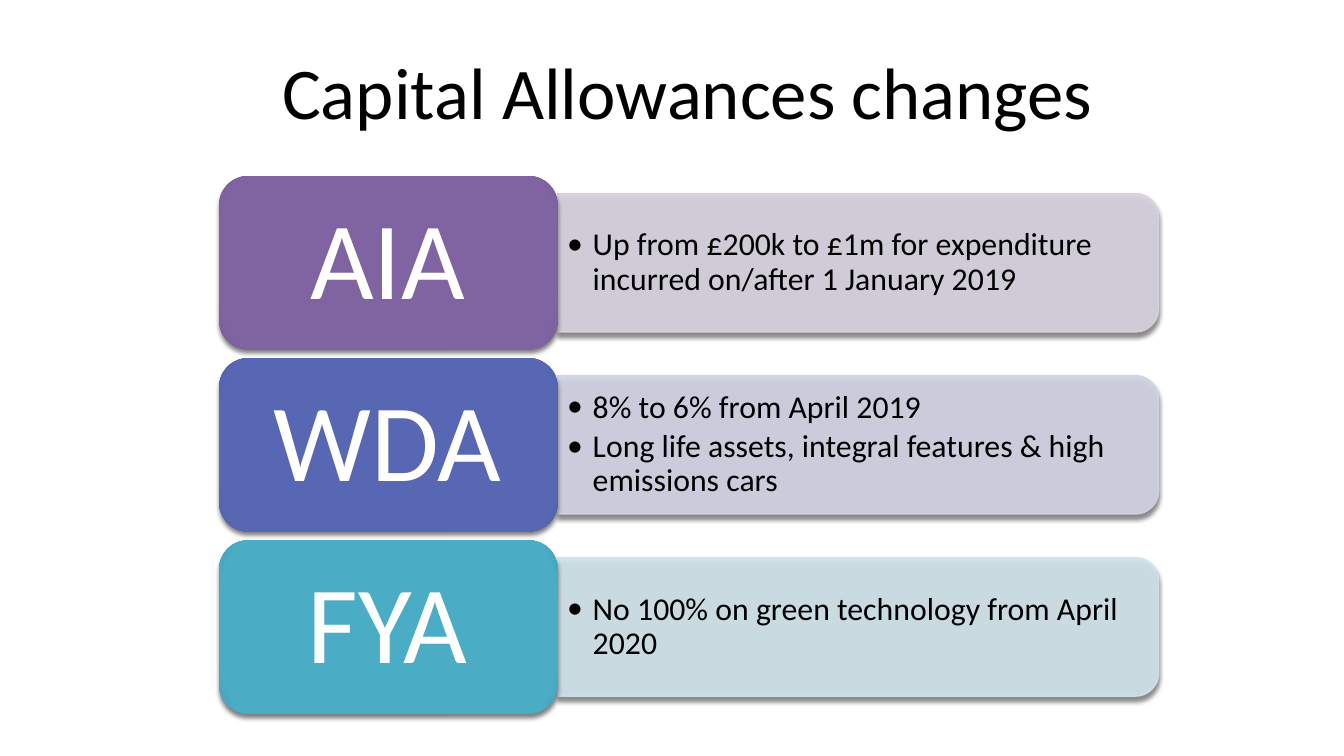
"""Build the capital allowances slide: three labels, each beside a panel of points."""
from pptx import Presentation
from pptx.dml.color import RGBColor as Rgb
from pptx.enum.shapes import MSO_SHAPE as Kind
from pptx.enum.text import MSO_ANCHOR as Anchor, MSO_AUTO_SIZE as Fit, PP_ALIGN as Align
from pptx.oxml import parse_xml
from pptx.oxml.ns import nsdecls
from pptx.util import Inches, Pt

THEME = {
    "font": "Calibri", "ink": "000000", "white": "FFFFFF",
    "title": 39, "label": 59, "point": 17,
    "rows": [("8064A2", "775D97", "D8D3E0"),
             ("5767B4", "5160A8", "D1D4E5"),
             ("4BACC6", "46A0B8", "D0E3EA")],
}
ROWS = [
    ("AIA", ["Up from £200k to £1m for expenditure incurred on/after 1 January 2019"]),
    ("WDA", ["8% to 6% from April 2019",
             "Long life assets, integral features & high emissions cars"]),
    ("FYA", ["No 100% on green technology from April 2020"]),
]
NS = nsdecls("a")
SHADE = (f'<a:outerShdw {NS} blurRad="31750" dist="25400" dir="5400000" rotWithShape="0">'
         '<a:srgbClr val="000000"><a:alpha val="50000"/></a:srgbClr></a:outerShdw>')
ALPHA = f'<a:alpha {NS} val="90000"/>'
BULLET = (f'<a:buFont {NS} typeface="{THEME["font"]}"/>', f'<a:buChar {NS} char="•"/>')


def write(frame, lines, size, ink, pads, **form):
    """Fill a text frame with styled paragraphs."""
    sides = ("margin_left", "margin_top", "margin_right", "margin_bottom")
    look = {"word_wrap": True, "auto_size": Fit.NONE,
            "vertical_anchor": form.pop("anchor", Anchor.MIDDLE)}
    look.update(zip(sides, [Inches(pad) for pad in pads * 2]))
    for name, value in look.items():
        setattr(frame, name, value)
    for i, line in enumerate(lines):
        para = frame.paragraphs[0] if i == 0 else frame.add_paragraph()
        for name, value in form.items():
            setattr(para, name, value)
        run = para.add_run()
        run.text = line
        for name, value in {"name": THEME["font"], "size": Pt(size)}.items():
            setattr(run.font, name, value)
        run.font.color.rgb = Rgb.from_string(ink)


def block(kind, left, top, width, height):
    """Add a preset shape with a soft drop shadow."""
    shape = slide.shapes.add_shape(kind, *map(Inches, (left, top, width, height)))
    shape.shadow.inherit = False
    shape.element.spPr.find("{*}effectLst").append(parse_xml(SHADE))
    return shape


deck = Presentation()
deck.slide_width, deck.slide_height = Inches(10), Inches(10) * 9 // 16
slide = deck.slides.add_slide(deck.slide_layouts[5])

title = slide.shapes.title
spot = {"left": 0.48, "top": 0.3, "width": 9.27, "height": 0.66}
for name, value in spot.items():
    setattr(title, name, Inches(value))
write(title.text_frame, ["Capital Allowances changes"], THEME["title"], THEME["ink"],
      (0.1, 0.05), anchor=Anchor.TOP, alignment=Align.CENTER)

left, first, last = 1.63, 1.31, 4.02
step = (last - first) / 2
wide, tall = 2.52, 1.29
long, deep = 4.47, 1.03

for i, ((label, points), (main, edge, pale)) in enumerate(zip(ROWS, THEME["rows"])):
    top = first + i * step
    mid = top + tall / 2
    side = left + wide

    panel = block(Kind.ROUND_2_SAME_RECTANGLE,
                  side + (long - deep) / 2, mid - long / 2, deep, long)
    panel.rotation = 90
    panel.fill.solid()
    panel.line.fill.solid()
    panel.line.width = Pt(0.79)
    for fill in (panel.fill, panel.line.fill):
        fill.fore_color.rgb = Rgb.from_string(pale)
    for tint in panel.element.spPr.iter("{*}srgbClr"):
        if tint.get("val") == pale:
            tint.append(parse_xml(ALPHA))

    box = slide.shapes.add_textbox(*map(Inches, (side, top + 0.18, 4.42, 0.93)))
    write(box.text_frame, points, THEME["point"], THEME["ink"], (0.07, 0.04),
          alignment=Align.LEFT, line_spacing=0.9, space_after=Pt(2.6))
    for para in box.text_frame.paragraphs:
        props = para._p.get_or_add_pPr()
        props.set("marL", str(Inches(0.19)))
        props.set("indent", str(-Inches(0.19)))
        for part in BULLET:
            props.append(parse_xml(part))

    tile = block(Kind.ROUNDED_RECTANGLE, left, top, wide, tall)
    tile.line.fill.background()
    stops = "".join(f'<a:gs pos="{pos}"><a:srgbClr val="{tone}"/></a:gs>'
                    for pos, tone in ((0, main), (90000, main), (100000, edge)))
    tile.element.spPr.insert(2, parse_xml(
        f'<a:gradFill {NS} rotWithShape="1"><a:gsLst>{stops}</a:gsLst><a:path path="circle">'
        '<a:fillToRect l="100000" t="100000" r="100000" b="100000"/></a:path></a:gradFill>'))

    box = slide.shapes.add_textbox(*map(Inches, (left + 0.06, top + 0.07, 2.39, 1.16)))
    write(box.text_frame, [label], THEME["label"], THEME["white"], (0.25, 0.12),
          alignment=Align.CENTER, line_spacing=0.9)

deck.save("out.pptx")
